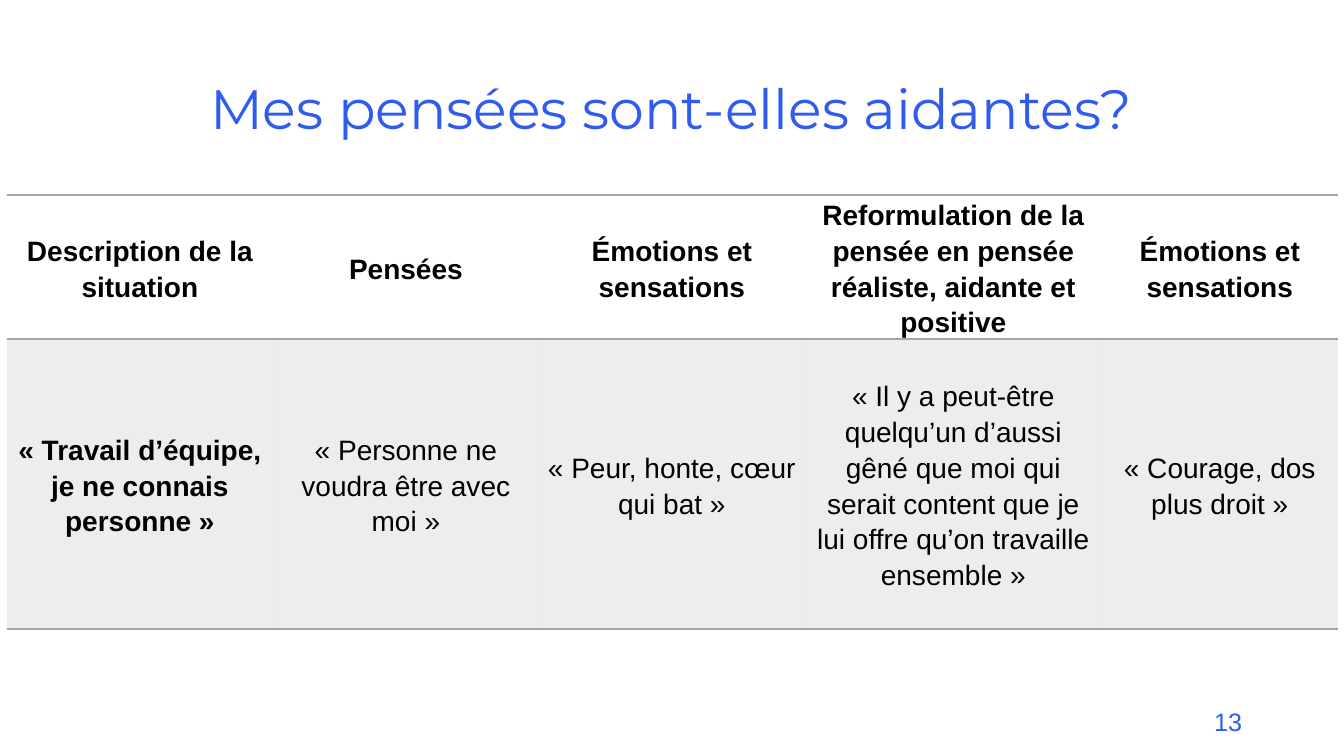
from pptx import Presentation
from pptx.dml.color import RGBColor
from pptx.enum.text import MSO_ANCHOR as Anchor, MSO_AUTO_SIZE as Fit, PP_ALIGN as Align
from pptx.oxml import parse_xml
from pptx.oxml.ns import nsdecls
from pptx.util import Pt

PX = 12192000 / 1344
COLORS = {"blue": "2F5CEE", "gray": "A5A5A5", "black": "000000"}
PLAIN = "{2D5ABB26-0587-4C30-8999-92F81FD0307C}"
WIDTHS = [266, 266, 266, 297, 236]
HEIGHTS = [144, 290]
ROWS = [
    ["Description de la situation", "Pensées", "Émotions et sensations",
     "Reformulation de la pensée en pensée réaliste, aidante et positive",
     "Émotions et sensations"],
    ["« Travail d’équipe, je ne connais personne »",
     "« Personne ne voudra être avec moi »",
     "« Peur, honte, cœur qui bat »",
     "« Il y a peut-être quelqu’un d’aussi gêné que moi qui serait content "
     "que je lui offre qu’on travaille ensemble »",
     "« Courage, dos plus droit »"],
]


def px(n):
    return round(n * PX)


def style(para, face, size, color, align, bold=False):
    para.alignment = align
    font = para.font
    font.name, font.size, font.bold = face, Pt(size), bold
    font.color.rgb = RGBColor.from_string(COLORS[color])


def add_title(slide, x, y, w, h):
    title = slide.shapes.title
    title.left, title.top, title.width, title.height = map(px, (x, y, w, h))
    frame = title.text_frame
    frame.text = "Mes pensées sont-elles aidantes?"
    frame.auto_size = Fit.NONE
    frame.vertical_anchor = Anchor.MIDDLE
    para = frame.paragraphs[0]
    para.line_spacing = 0.9
    style(para, "Montserrat", 39.6, "blue", Align.CENTER)


def add_rules(cell):
    props = cell._tc.get_or_add_tcPr()
    for spot, side in enumerate(("lnT", "lnB")):
        props.insert(spot, parse_xml(
            f'<a:{side} {nsdecls("a")} w="12700"><a:solidFill>'
            f'<a:srgbClr val="{COLORS["gray"]}"/></a:solidFill></a:{side}>'))


def shade(cell):
    cell.fill.solid()
    cell.fill.fore_color.rgb = RGBColor.from_string(COLORS["gray"])
    tint = cell._tc.tcPr.find(".//{*}srgbClr")
    tint.append(parse_xml(f'<a:alpha {nsdecls("a")} val="20000"/>'))


def fill_cell(cell, text, head, bold):
    cell.text = text
    cell.vertical_anchor = Anchor.MIDDLE
    cell.margin_left = cell.margin_right = px(7)
    cell.margin_top = cell.margin_bottom = 0
    para = cell.text_frame.paragraphs[0]
    para.line_spacing = 1.15
    para.space_after = Pt(7)
    style(para, "Arial", 20, "black", Align.CENTER, bold)
    if head:
        cell.fill.background()
    else:
        shade(cell)
    add_rules(cell)


def add_grid(slide, x, y, w, h):
    frame = slide.shapes.add_table(len(ROWS), len(WIDTHS), *map(px, (x, y, w, h)))
    table = frame.table
    table._tbl.tblPr.find("{*}tableStyleId").text = PLAIN
    table.horz_banding = False
    for col, width in zip(table.columns, WIDTHS):
        col.width = px(width)
    for r, (row, height) in enumerate(zip(table.rows, HEIGHTS)):
        row.height = px(height)
        for c, text in enumerate(ROWS[r]):
            fill_cell(row.cells[c], text, r == 0, r == 0 or c == 0)


def add_page(slide, x, y, w, h):
    frame = slide.shapes.add_textbox(*map(px, (x, y, w, h))).text_frame
    frame.word_wrap = True
    frame.text = "13"
    style(frame.paragraphs[0], "Arial", 18, "blue", Align.RIGHT)


def main():
    deck = Presentation()
    deck.slide_width, deck.slide_height = px(1344), px(756)
    slide = deck.slides.add_slide(deck.slide_layouts[5])
    add_title(slide, 141, 55, 1060, 113)
    add_grid(slide, 7, 195, sum(WIDTHS), sum(HEIGHTS))
    add_page(slide, 950, 701, 302, 40)
    deck.save("out.pptx")


if __name__ == "__main__":
    main()
